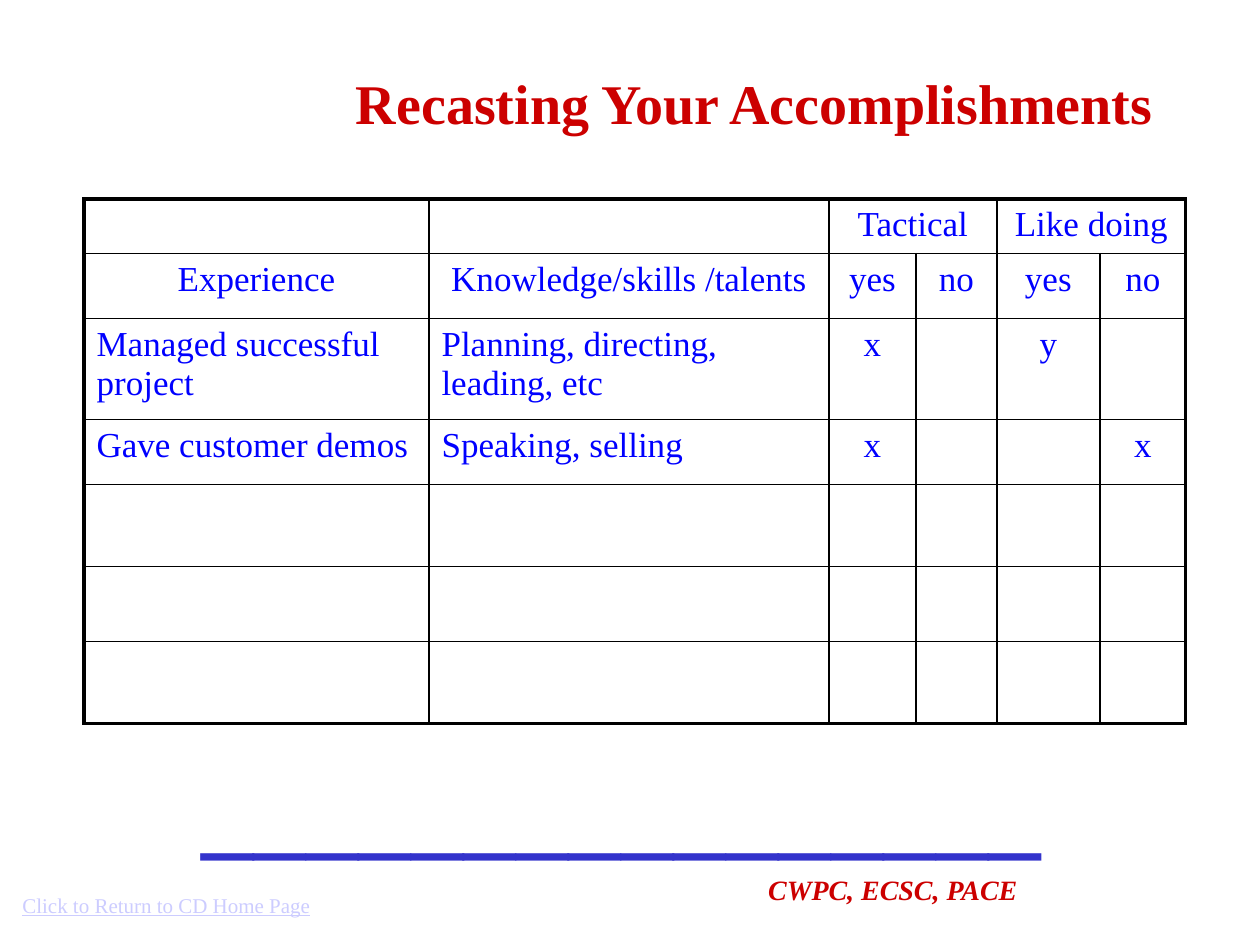
import pptx
import pptx.util
import pptx.dml.color
import pptx.enum.text
import pptx.oxml
import pptx.oxml.ns

RED = pptx.dml.color.RGBColor(0xCC, 0x00, 0x00)
BLUE = pptx.dml.color.RGBColor(0x00, 0x00, 0xFF)
RULE_BLUE = pptx.dml.color.RGBColor(0x33, 0x33, 0xCC)
PALE_BLUE = pptx.dml.color.RGBColor(0xCC, 0xCC, 0xFF)
BLACK = pptx.dml.color.RGBColor(0x00, 0x00, 0x00)
FONT = "Times New Roman"
ALIGN = pptx.enum.text.PP_ALIGN

TITLE = "Recasting Your Accomplishments"
HEADER_ROWS = 2
ROWS = [
    ["", "", "Tactical", "", "Like doing", ""],
    ["Experience", "Knowledge/skills /talents", "yes", "no", "yes", "no"],
    ["Managed successful project", "Planning, directing, leading, etc", "x", "", "y", ""],
    ["Gave customer demos", "Speaking, selling", "x", "", "", "x"],
    [""] * 6,
    [""] * 6,
    [""] * 6,
]
TEXT_COLUMNS = 2
COLUMN_WIDTHS = [345, 400, 87, 81, 103, 86]
ROW_HEIGHTS = [54, 65, 101, 65, 82, 75, 82]
TABLE_LEFT, TABLE_TOP = 84, 199
INNER_LINE, OUTER_LINE = 1, 2.25

# text, box in px, size, colour, alignment, wrap, font style
FOOTER = [
    ("_" * 16, (189, 735, 892, 139), 60, RULE_BLUE, ALIGN.LEFT, True, {"bold": True}),
    ("CWPC, ECSC, PACE", (662, 866, 368, 47), 16, RED, ALIGN.RIGHT, True,
     {"bold": True, "italic": True}),
    ("Click to Return to CD Home Page", (10, 886, 339, 38), 12, PALE_BLUE, ALIGN.LEFT, False,
     {"underline": True}),
]


def px(length):
    return round(length * 914400 / 126)


def write(frame, text, size, colour, align, **style):
    frame.text = text
    paragraph = frame.paragraphs[0]
    paragraph.alignment = align
    font = paragraph.font
    font.name, font.size = FONT, pptx.util.Pt(size)
    font.color.rgb = colour
    for attribute, value in style.items():
        setattr(font, attribute, value)


def set_borders(cell, widths):
    """Draw the left, right, top and bottom borders, with widths in points."""
    properties = cell._tc.get_or_add_tcPr()
    for index, (side, width) in enumerate(zip("LRTB", widths)):
        properties.insert(index, pptx.oxml.parse_xml(
            f'<a:ln{side} {pptx.oxml.ns.nsdecls("a")} w="{pptx.util.Pt(width)}">'
            f'<a:solidFill><a:srgbClr val="{BLACK}"/></a:solidFill></a:ln{side}>'))


def add_footer(slide):
    for text, box, size, colour, align, wrap, style in FOOTER:
        frame = slide.shapes.add_textbox(*map(px, box)).text_frame
        frame.word_wrap = wrap
        write(frame, text, size, colour, align, **style)


def add_title(slide):
    title = slide.shapes.title
    title.left, title.top, title.width, title.height = map(px, (294, 63, 872, 79))
    title.text_frame.vertical_anchor = pptx.enum.text.MSO_ANCHOR.MIDDLE
    write(title.text_frame, TITLE, 32, RED, ALIGN.RIGHT, bold=True)


def add_skills_table(slide):
    last_row, last_column = len(ROWS) - 1, len(COLUMN_WIDTHS) - 1
    table = slide.shapes.add_table(
        len(ROWS), len(COLUMN_WIDTHS), px(TABLE_LEFT), px(TABLE_TOP),
        px(sum(COLUMN_WIDTHS)), px(sum(ROW_HEIGHTS))).table
    table.first_row = table.horz_banding = False
    for column, width in zip(table.columns, COLUMN_WIDTHS):
        column.width = px(width)
    for row, height in zip(table.rows, ROW_HEIGHTS):
        row.height = px(height)
    for first in (2, 4):
        table.cell(0, first).merge(table.cell(0, first + 1))

    for r, row in enumerate(ROWS):
        for c, text in enumerate(row):
            cell = table.cell(r, c)
            cell.fill.background()
            at_edge = (c == 0, c == last_column or cell.is_merge_origin and c + 1 == last_column,
                       r == 0, r == last_row)
            set_borders(cell, [OUTER_LINE if edge else INNER_LINE for edge in at_edge])
            if text:
                centred = r < HEADER_ROWS or c >= TEXT_COLUMNS
                write(cell.text_frame, text, 20, BLUE, ALIGN.CENTER if centred else ALIGN.LEFT)


def main():
    presentation = pptx.Presentation()
    presentation.slide_width, presentation.slide_height = px(1260), px(945)
    slide = presentation.slides.add_slide(presentation.slide_layouts[5])
    add_footer(slide)
    add_title(slide)
    add_skills_table(slide)
    presentation.save("out.pptx")


if __name__ == "__main__":
    main()
